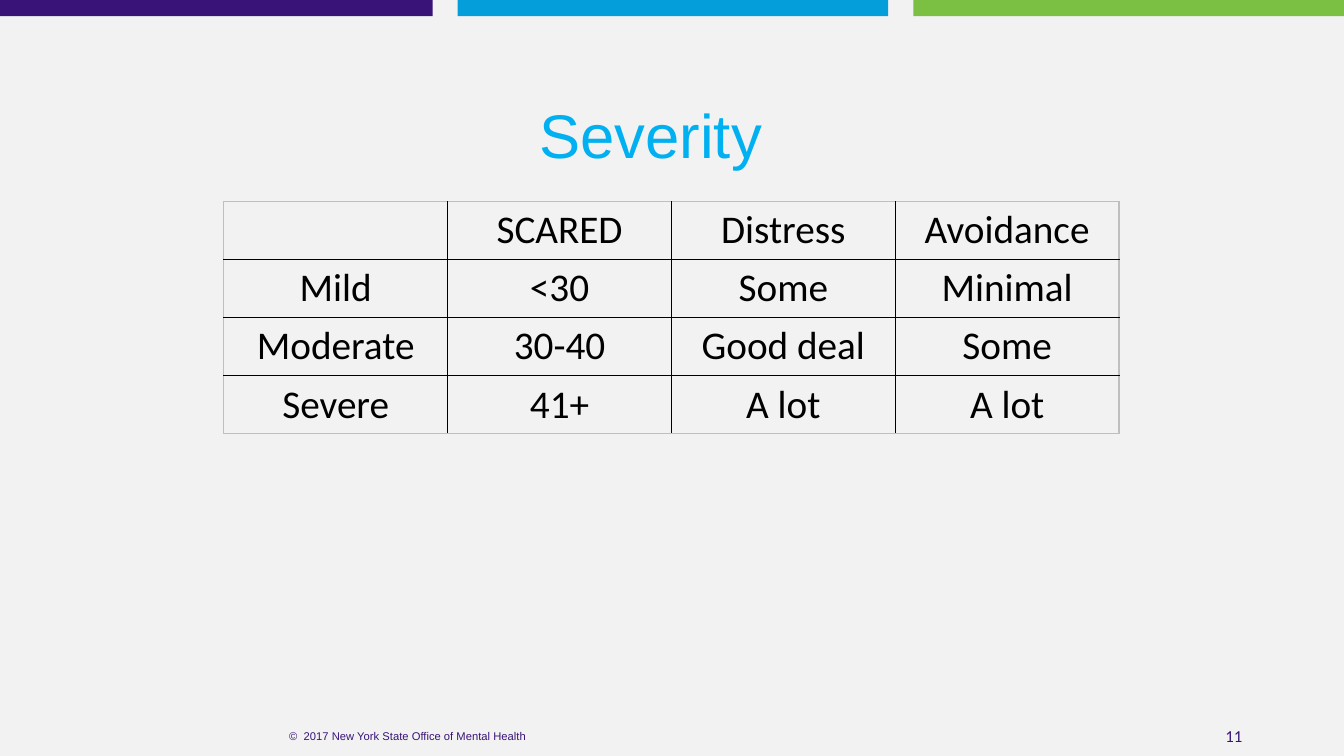
import pptx
import pptx.dml.color
import pptx.enum.shapes
import pptx.enum.text
import pptx.oxml
import pptx.oxml.ns
import pptx.util

Inches = pptx.util.Inches
ALIGN = pptx.enum.text.PP_ALIGN

COLORS = {
    "background": "F2F2F2",
    "purple": "391378",
    "blue": "049FDA",
    "green": "7BBF43",
    "title": "00B0F0",
    "text": "000000",
    "inner": "000000",
    "outer": "BFBFBF",
}

SEVERITY_ROWS = [
    ["", "SCARED", "Distress", "Avoidance"],
    ["Mild", "<30", "Some", "Minimal"],
    ["Moderate", "30-40", "Good deal", "Some"],
    ["Severe", "41+", "A lot", "A lot"],
]


class SlideBuilder:
    """Holds the style and the current slide."""

    def __init__(self, deck):
        self.slide = deck.slides.add_slide(deck.slide_layouts[5])
        self.paint(self.slide.background.fill, "background")

    def color(self, name):
        return pptx.dml.color.RGBColor.from_string(COLORS[name])

    def paint(self, fill, name):
        fill.solid()
        fill.fore_color.rgb = self.color(name)

    def add_text(self, frame, text, size, font, color, align):
        para = frame.paragraphs[0]
        para.alignment = align
        span = para.add_run()
        span.text = text
        span.font.size = pptx.util.Pt(size)
        span.font.name = font
        span.font.color.rgb = self.color(color)
        return para

    def bar(self, left, width, color):
        shape = self.slide.shapes.add_shape(
            pptx.enum.shapes.MSO_SHAPE.RECTANGLE,
            Inches(left), Inches(0), Inches(width), Inches(0.16))
        shape.shadow.inherit = False
        self.paint(shape.fill, color)
        shape.line.fill.background()

    def title(self, text, left, top, width, height):
        box = self.slide.shapes.title
        box.left, box.top = Inches(left), Inches(top)
        box.width, box.height = Inches(width), Inches(height)
        frame = box.text_frame
        frame.auto_size = pptx.enum.text.MSO_AUTO_SIZE.NONE
        frame.vertical_anchor = pptx.enum.text.MSO_ANCHOR.MIDDLE
        para = self.add_text(frame, text, 44, "Arial", "title", ALIGN.CENTER)
        para.line_spacing = 0.9

    def footer(self, text, left, width, size, font, align):
        box = self.slide.shapes.add_textbox(
            Inches(left), Inches(7.1), Inches(width), Inches(0.4))
        frame = box.text_frame
        frame.word_wrap = True
        frame.vertical_anchor = pptx.enum.text.MSO_ANCHOR.MIDDLE
        self.add_text(frame, text, size, font, "purple", align)

    def border(self, side, color):
        return pptx.oxml.parse_xml(
            f'<a:{side} {pptx.oxml.ns.nsdecls("a")} w="{pptx.util.Pt(1)}">'
            f'<a:solidFill><a:srgbClr val="{COLORS[color]}"/></a:solidFill>'
            f'</a:{side}>')

    def table(self, rows, left, top, column_width, row_height):
        row_count, column_count = len(rows), len(rows[0])
        table = self.slide.shapes.add_table(
            row_count, column_count, Inches(left), Inches(top),
            Inches(column_width * column_count),
            Inches(row_height * row_count)).table
        table.first_row = table.horz_banding = False
        for r, row in enumerate(rows):
            for c, text in enumerate(row):
                cell = table.cell(r, c)
                cell.fill.background()
                # Border lines come before the fill in the cell properties
                outer_sides = {"lnL": c == 0, "lnR": c == column_count - 1,
                               "lnT": r == 0, "lnB": r == row_count - 1}
                properties = cell._tc.get_or_add_tcPr()
                for index, (side, is_outer) in enumerate(outer_sides.items()):
                    color = "outer" if is_outer else "inner"
                    properties.insert(index, self.border(side, color))
                if text:
                    self.add_text(cell.text_frame, text, 28, "Calibri",
                                  "text", ALIGN.CENTER)


def main():
    deck = pptx.Presentation()
    deck.slide_width, deck.slide_height = Inches(13.33), Inches(7.5)
    page = SlideBuilder(deck)

    # Colour bars along the top edge
    for left, width, color in [(0, 4.29, "purple"), (4.54, 4.27, "blue"),
                               (9.06, 4.27, "green")]:
        page.bar(left, width, color)

    # Title and severity table
    page.title("Severity ", 0.79, 0.92, 11.5, 0.9)
    page.table(SEVERITY_ROWS, 2.22, 2, 2.22, 0.57)

    # Page number and copyright line
    page.footer("11", 9.42, 3, 12, "Calibri", ALIGN.RIGHT)
    page.footer("©  2017 New York State Office of Mental Health",
                1.81, 4.47, 8, "Arial", ALIGN.CENTER)

    deck.save("out.pptx")


if __name__ == "__main__":
    main()
